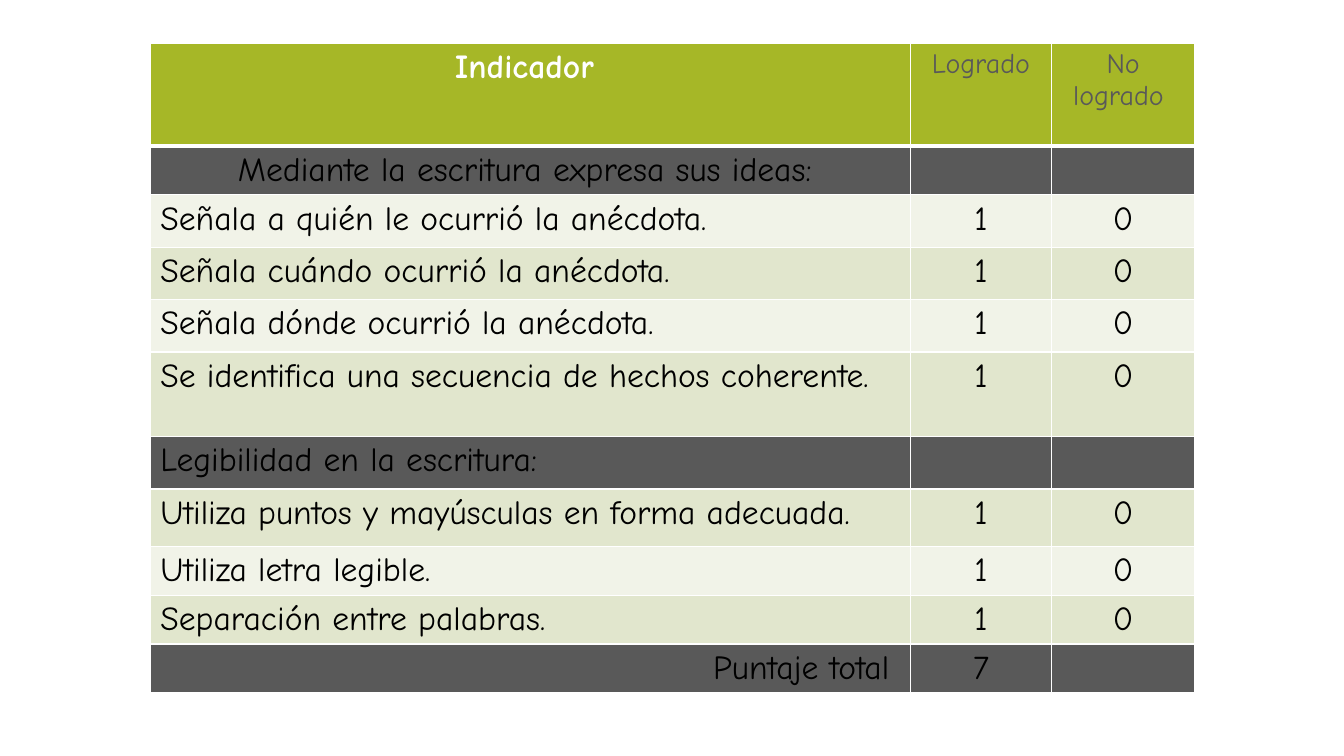
"""Build a slide with a grading rubric for a written anecdote."""
from dataclasses import dataclass

from lxml.etree import SubElement
from pptx import Presentation
from pptx.dml.color import RGBColor
from pptx.enum.text import PP_ALIGN
from pptx.oxml.ns import qn
from pptx.table import _Cell
from pptx.util import Inches, Pt


@dataclass(frozen=True)
class Theme:
    """Hold the colours, font and type sizes of the slide."""
    font: str = "Comic Neue"
    size: int = 24
    small: int = 20
    white: str = "FFFFFF"
    black: str = "000000"
    gray: str = "595959"
    green: str = "A6B727"
    bands: tuple[str, str] = ("F1F3E8", "E1E6CD")
    thin: int = 1
    thick: int = 3


@dataclass(frozen=True)
class Row:
    """Describe one row of the rubric."""
    height: float
    label: str
    scores: tuple[str, str] = ("1", "0")
    align: PP_ALIGN = PP_ALIGN.LEFT
    section: bool = False


THEME = Theme()
COL_WIDTHS = (7.54, 1.4, 1.42)
ROWS = (
    Row(1.02, "Indicador ", (" Logrado ", "No logrado "), PP_ALIGN.CENTER),
    Row(0.46, "Mediante la escritura expresa sus ideas: ", ("", ""), PP_ALIGN.CENTER, True),
    Row(0.52, "Señala a quién le ocurrió la anécdota."),
    Row(0.52, "Señala cuándo ocurrió la anécdota."),
    Row(0.52, "Señala dónde ocurrió la anécdota."),
    Row(0.84, "Se identifica una secuencia de hechos coherente."),
    Row(0.52, "Legibilidad en la escritura:", ("", ""), section=True),
    Row(0.57, "Utiliza puntos y mayúsculas en forma adecuada."),
    Row(0.46, "Utiliza letra legible."),
    Row(0.46, "Separación entre palabras."),
    Row(0.46, "Puntaje total ", ("7", ""), PP_ALIGN.RIGHT, True),
)


def set_borders(cell: _Cell, top: int, bottom: int) -> None:
    """Draw white borders around a cell."""
    tcPr = cell._tc.get_or_add_tcPr()
    widths = {"a:lnL": THEME.thin, "a:lnR": THEME.thin, "a:lnT": top, "a:lnB": bottom}
    for tag, width in widths.items():
        ln = SubElement(tcPr, qn(tag), w=str(Pt(width)))
        fill = SubElement(ln, qn("a:solidFill"))
        SubElement(fill, qn("a:srgbClr"), val=THEME.white)


def write_text(cell: _Cell, text: str, align: PP_ALIGN, color: str, size: int, bold: bool) -> None:
    """Write one formatted paragraph into a cell."""
    p = cell.text_frame.paragraphs[0]
    p.alignment = align
    if not text:
        return
    r = p.add_run()
    r.text = text
    for name, value in {"name": THEME.font, "size": Pt(size), "bold": bold}.items():
        setattr(r.font, name, value)
    r.font.color.rgb = RGBColor.from_string(color)


def fill_cell(cell: _Cell, i: int, j: int) -> None:
    """Format and fill the cell in row i and column j."""
    row, header = ROWS[i], i == 0
    set_borders(cell, THEME.thick if i == 1 else THEME.thin, THEME.thick if header else THEME.thin)
    fill = THEME.green if header else THEME.gray if row.section else THEME.bands[i % 2]
    cell.fill.solid()
    cell.fill.fore_color.rgb = RGBColor.from_string(fill)
    color, size = THEME.black, THEME.size
    if header:
        color, size = (THEME.gray, THEME.small) if j else (THEME.white, THEME.size)
    align = PP_ALIGN.CENTER if j else row.align
    write_text(cell, (row.label, *row.scores)[j], align, color, size, header and j == 0)


def main() -> None:
    """Create the slide and save it."""
    prs = Presentation()
    prs.slide_width, prs.slide_height = Inches(13.33), Inches(7.5)
    s = prs.slides.add_slide(prs.slide_layouts[6])
    width, height = sum(COL_WIDTHS), sum(row.height for row in ROWS)
    table = s.shapes.add_table(len(ROWS), len(COL_WIDTHS), Inches(1.49), Inches(0.43),
                               Inches(width), Inches(height)).table
    for col, col_width in zip(table.columns, COL_WIDTHS):
        col.width = Inches(col_width)
    for i, row in enumerate(ROWS):
        table.rows[i].height = Inches(row.height)
        for j in range(len(COL_WIDTHS)):
            fill_cell(table.cell(i, j), i, j)
    prs.save("out.pptx")


if __name__ == "__main__":
    main()
